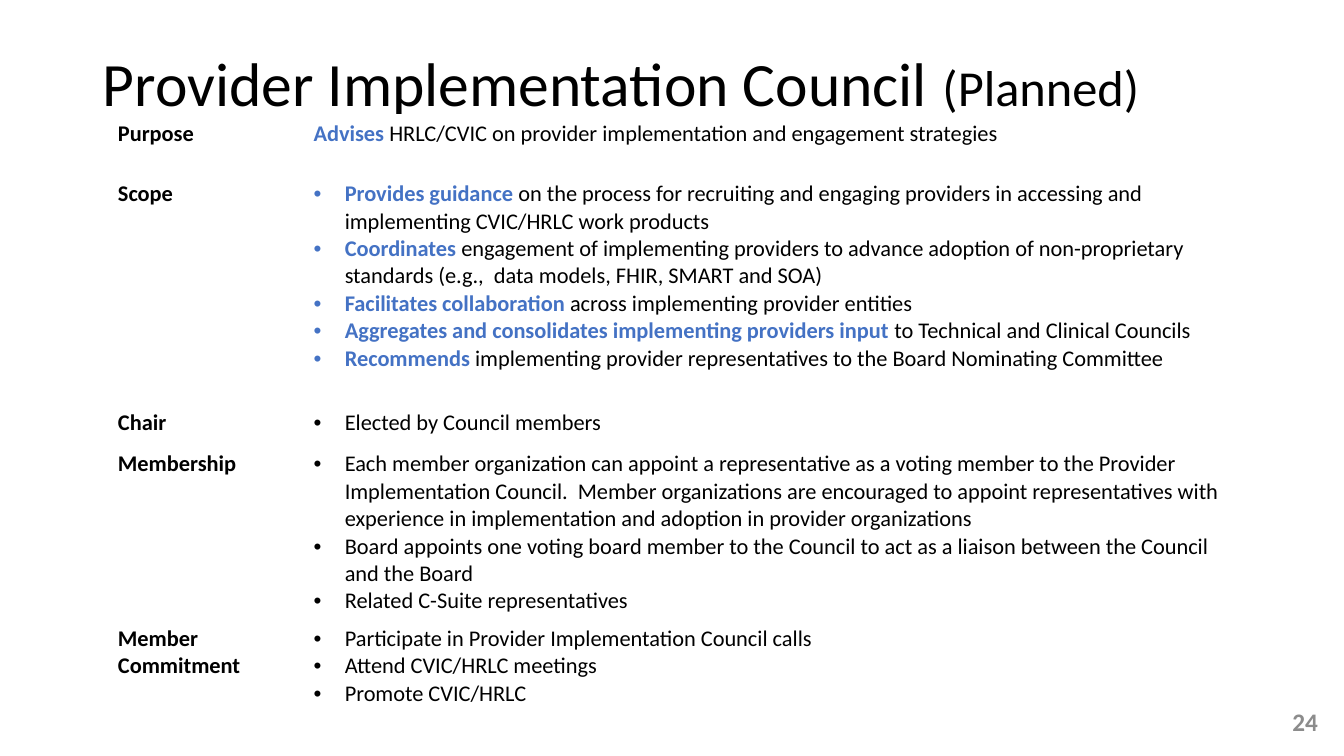
import pptx
import pptx.util
import pptx.dml.color
import pptx.enum.text
import pptx.oxml
import pptx.oxml.ns
import lxml.etree

Inches = pptx.util.Inches
BLACK = "000000"
BLUE = "4472C4"
WHITE = "FFFFFF"
GRAY = "8C8C8C"
COLUMN_WIDTHS = [1.94, 9.4]

CHARTER = [
    ("Purpose", 0.6, False, [
        ("Advises", " HRLC/CVIC on provider implementation and engagement strategies"),
    ]),
    ("Scope", 2.27, True, [
        ("Provides guidance ", "on the process for recruiting and engaging providers in "
         "accessing and implementing CVIC/HRLC work products"),
        ("Coordinates ", "engagement of implementing providers to advance adoption of "
         "non-proprietary standards (e.g.,  data models, FHIR, SMART and SOA)"),
        ("Facilitates collaboration ", "across implementing provider entities"),
        ("Aggregates and consolidates implementing providers input ",
         "to Technical and Clinical Councils"),
        ("Recommends", " implementing provider representatives to the Board Nominating Committee"),
    ]),
    ("Chair", 0.41, True, [("", "Elected by Council members")]),
    ("Membership", 1.73, True, [
        ("", "Each member organization can appoint a representative as a voting member to the "
         "Provider Implementation Council.  Member organizations are encouraged to appoint "
         "representatives with experience in implementation and adoption in provider organizations"),
        ("", "Board appoints one voting board member to the Council to act as a liaison "
         "between the Council and the Board"),
        ("", "Related C-Suite representatives"),
    ]),
    ("Member Commitment", 0.92, True, [
        ("", "Participate in Provider Implementation Council calls"),
        ("", "Attend CVIC/HRLC meetings"),
        ("", "Promote CVIC/HRLC"),
    ]),
]


def color(code):
    return pptx.dml.color.RGBColor.from_string(code)


def add_span(para, text, size=16, fill=BLACK, bold=False):
    span = para.add_run()
    span.text = text
    span.font.name = "Calibri"
    span.font.size = pptx.util.Pt(size)
    span.font.bold = bold
    span.font.color.rgb = color(fill)


def add_bullet(para, indent=0.31):
    properties = para._p.get_or_add_pPr()
    properties.set("marL", str(Inches(indent)))
    properties.set("indent", str(-Inches(indent)))
    for tag, name, value in (("a:buFont", "typeface", "Arial"), ("a:buChar", "char", "•")):
        mark = lxml.etree.SubElement(properties, pptx.oxml.ns.qn(tag))
        mark.set(name, value)


def set_borders(cell, top, bottom):
    properties = cell._tc.get_or_add_tcPr()
    widths = {"lnL": 1, "lnR": 1, "lnT": top, "lnB": bottom}
    for position, (side, width) in enumerate(widths.items()):
        line = pptx.oxml.parse_xml(
            f'<a:{side} {pptx.oxml.ns.nsdecls("a")} w="{pptx.util.Pt(width)}">'
            f'<a:solidFill><a:srgbClr val="{WHITE}"/></a:solidFill></a:{side}>')
        properties.insert(position, line)


def place_title(page, left, top, width, height):
    title = page.shapes.title
    title.left, title.top = Inches(left), Inches(top)
    title.width, title.height = Inches(width), Inches(height)
    frame = title.text_frame
    frame.auto_size = pptx.enum.text.MSO_AUTO_SIZE.NONE
    frame.vertical_anchor = pptx.enum.text.MSO_ANCHOR.MIDDLE
    para = frame.paragraphs[0]
    para.alignment = pptx.enum.text.PP_ALIGN.LEFT
    para.line_spacing = 0.9
    add_span(para, "Provider Implementation Council ", size=44)
    add_span(para, "(Planned)", size=36)


def fill_details(frame, details, bulleted):
    for index, (lead, rest) in enumerate(details):
        para = frame.add_paragraph() if index else frame.paragraphs[0]
        if bulleted:
            add_bullet(para)
        if lead:
            add_span(para, lead, fill=BLUE, bold=True)
        add_span(para, rest)


def place_charter(page, left, top):
    height = sum(entry[1] for entry in CHARTER)
    table = page.shapes.add_table(
        len(CHARTER), len(COLUMN_WIDTHS), Inches(left), Inches(top),
        Inches(sum(COLUMN_WIDTHS)), Inches(height)).table
    table.first_row = False
    table.horz_banding = False
    for column, width in zip(table.columns, COLUMN_WIDTHS):
        column.width = Inches(width)
    for index, (label, row_height, bulleted, details) in enumerate(CHARTER):
        row = table.rows[index]
        row.height = Inches(row_height)
        for cell in row.cells:
            cell.fill.background()
            set_borders(cell, top=3 if index == 1 else 1, bottom=3 if index == 0 else 1)
        label_cell, detail_cell = row.cells
        add_span(label_cell.text_frame.paragraphs[0], label, bold=True)
        fill_details(detail_cell.text_frame, details, bulleted)


def place_page_number(page, left, top, width, height):
    box = page.shapes.add_textbox(Inches(left), Inches(top), Inches(width), Inches(height))
    frame = box.text_frame
    frame.word_wrap = True
    frame.vertical_anchor = pptx.enum.text.MSO_ANCHOR.MIDDLE
    para = frame.paragraphs[0]
    para.alignment = pptx.enum.text.PP_ALIGN.RIGHT
    add_span(para, "24", size=18, fill=GRAY, bold=True)


def main():
    deck = pptx.Presentation()
    deck.slide_width, deck.slide_height = Inches(13.33), Inches(7.5)
    page = deck.slides.add_slide(deck.slide_layouts.get_by_name("Title Only"))
    place_title(page, 0.92, 0.13, 11.5, 1.45)
    place_charter(page, 1.07, 1.14)
    place_page_number(page, 10.17, 6.96, 3, 0.4)
    deck.save("out.pptx")


if __name__ == "__main__":
    main()
